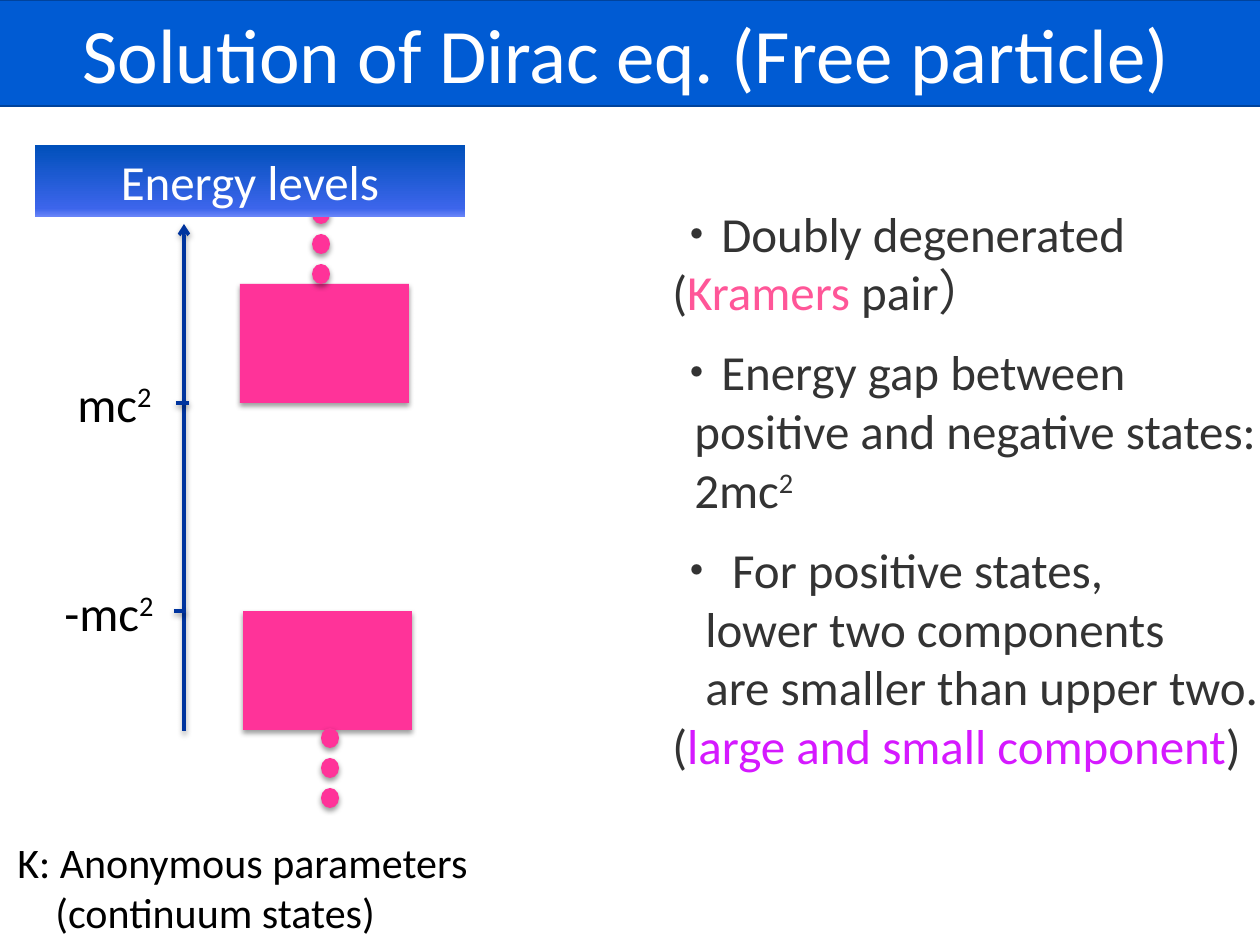
from copy import deepcopy

from lxml.etree import SubElement
from pptx import Presentation
from pptx.dml.color import RGBColor
from pptx.enum.shapes import MSO_CONNECTOR, MSO_SHAPE
from pptx.enum.text import MSO_ANCHOR, PP_ALIGN
from pptx.oxml.ns import qn
from pptx.util import Emu, Pt

FONT = "Calibri"
WHITE = RGBColor(0xFF, 0xFF, 0xFF)
BLACK = RGBColor(0x00, 0x00, 0x00)
GREY = RGBColor(0x33, 0x33, 0x33)
TITLE_BLUE = RGBColor(0x00, 0x5B, 0xD3)
TITLE_EDGE = RGBColor(0x00, 0x43, 0x9C)
AXIS_BLUE = RGBColor(0x00, 0x34, 0x9E)
LEVEL_PINK = RGBColor(0xFF, 0x33, 0x99)
KRAMERS_PINK = RGBColor(0xFF, 0x56, 0x98)
COMPONENT_PURPLE = RGBColor(0xD5, 0x19, 0xFF)
HEADER_STOPS = [
    (0, RGBColor(0x6A, 0x85, 0xF9)),
    (0.12, RGBColor(0x3C, 0x65, 0xEB)),
    (1, RGBColor(0x00, 0x50, 0xBA)),
]
SUPER = "superscript"


def px(length):
    return Emu(round(length * 914400 / 126))


def add_shadow(shape, opacity, distance):
    """Soft black shadow straight below a shape or connector."""
    properties = shape._element.spPr
    effects = properties.find(qn("a:effectLst"))
    if effects is None:
        effects = SubElement(properties, qn("a:effectLst"))
    shadow = SubElement(effects, qn("a:outerShdw"), blurRad=str(Pt(3.1)),
                        dist=str(Pt(distance)), dir="5400000", rotWithShape="0")
    color = SubElement(shadow, qn("a:srgbClr"), val="000000")
    SubElement(color, qn("a:alpha"), val=str(opacity * 1000))


def add_block(slide, kind, box, color=None):
    block = slide.shapes.add_shape(kind, *map(px, box))
    block.shadow.inherit = False
    block.line.fill.background()
    if color is not None:
        block.fill.solid()
        block.fill.fore_color.rgb = color
    return block


def add_level(slide, kind, box):
    add_shadow(add_block(slide, kind, box, LEVEL_PINK), 38, 1.6)


def add_axis_line(slide, start, end, arrow=False):
    line = slide.shapes.add_connector(MSO_CONNECTOR.STRAIGHT, *map(px, start + end))
    line.line.color.rgb = AXIS_BLUE
    line.line.width = Pt(2)
    if arrow:
        SubElement(line._element.spPr.find(qn("a:ln")), qn("a:tailEnd"), type="arrow")
    add_shadow(line, 35, 1.8)


def style_run(run, size, color):
    run.font.name = FONT
    run.font.size = Pt(size)
    run.font.color.rgb = color


def write_heading(banner, text, size):
    banner.text_frame.text = text
    banner.text_frame.vertical_anchor = MSO_ANCHOR.MIDDLE
    paragraph = banner.text_frame.paragraphs[0]
    paragraph.alignment = PP_ALIGN.CENTER
    style_run(paragraph.runs[0], size, WHITE)


def add_text(slide, box, lines, size, color, wrap=True):
    """Each line is (indent px, space before pt, [(text, accent), ...])."""
    frame = slide.shapes.add_textbox(*map(px, box)).text_frame
    frame.word_wrap = wrap
    for index, (indent, space, parts) in enumerate(lines):
        paragraph = frame.add_paragraph() if index else frame.paragraphs[0]
        paragraph.space_before = Pt(space)
        if indent:
            paragraph._p.get_or_add_pPr().set("marL", str(px(indent)))
        for text, accent in parts:
            run = paragraph.add_run()
            run.text = text
            plain = accent is None or accent == SUPER
            style_run(run, size, color if plain else accent)
            if accent == SUPER:
                run._r.get_or_add_rPr().set("baseline", "30000")


def add_header(slide, box, text):
    header = add_block(slide, MSO_SHAPE.RECTANGLE, box)
    header.fill.gradient()
    header.fill.gradient_angle = 90
    stop_list = header._element.spPr.find(qn("a:gradFill")).find(qn("a:gsLst"))
    stop_list.append(deepcopy(stop_list[0]))
    for stop, (position, color) in zip(header.fill.gradient_stops, HEADER_STOPS):
        stop.position = position
        stop.color.rgb = color
    write_heading(header, text, 28)


def main():
    deck = Presentation()
    deck.slide_width, deck.slide_height = px(1260), px(945)
    slide = deck.slides.add_slide(deck.slide_layouts[6])

    # Title banner
    title = add_block(slide, MSO_SHAPE.RECTANGLE, (-14, 0, 1281, 106), TITLE_BLUE)
    title.line.color.rgb = TITLE_EDGE
    title.line.width = Pt(1.25)
    write_heading(title, "Solution of Dirac eq. (Free particle)", 44)

    # Energy axis and the two continua
    add_axis_line(slide, (184, 731), (184, 224), arrow=True)
    for left, top in ((243, 611), (240, 284)):
        add_level(slide, MSO_SHAPE.RECTANGLE, (left, top, 169, 119))

    # Marked energies
    for text, left, top, tick_start, tick_end, tick_y in (
        ("-mc", 52, 576, 174, 186, 611),
        ("mc", 65, 367, 176, 189, 403),
    ):
        add_text(slide, (left, top, 123, 72), [(0, 0, [(text, None), ("2", SUPER)])],
                 28, BLACK)
        add_axis_line(slide, (tick_start, tick_y), (tick_end, tick_y))

    # Dots continuing each continuum
    for left, first_top in ((312, 204), (321, 728)):
        for step in range(3):
            add_level(slide, MSO_SHAPE.OVAL, (left, first_top + 30 * step, 18, 20))

    # Caption and diagram header
    add_text(slide, (5, 830, 784, 115), [
        (0, 0, [("K: Anonymous parameters", None)]),
        (38, 0, [("(continuum states)", None)]),
    ], 24, BLACK)
    add_header(slide, (35, 145, 430, 72), "Energy levels")

    # Properties of the solution
    add_text(slide, (660, 197, 619, 670), [
        (0, 0, [("・Doubly degenerated", None)]),
        (0, 0, [("(", None), ("Kramers ", KRAMERS_PINK), ("pair）", None)]),
        (0, 12, [("・Energy gap between", None)]),
        (22, 0, [("positive and negative states:", None)]),
        (22, 0, [("2mc", None), ("2", SUPER)]),
        (0, 12, [("・ For positive states,", None)]),
        (33, 0, [("lower two components", None)]),
        (33, 0, [("are smaller than upper two.", None)]),
        (0, 0, [("(", None), ("large and small component", COMPONENT_PURPLE),
                (")", None)]),
    ], 28, GREY, wrap=False)

    deck.save("out.pptx")


if __name__ == "__main__":
    main()
